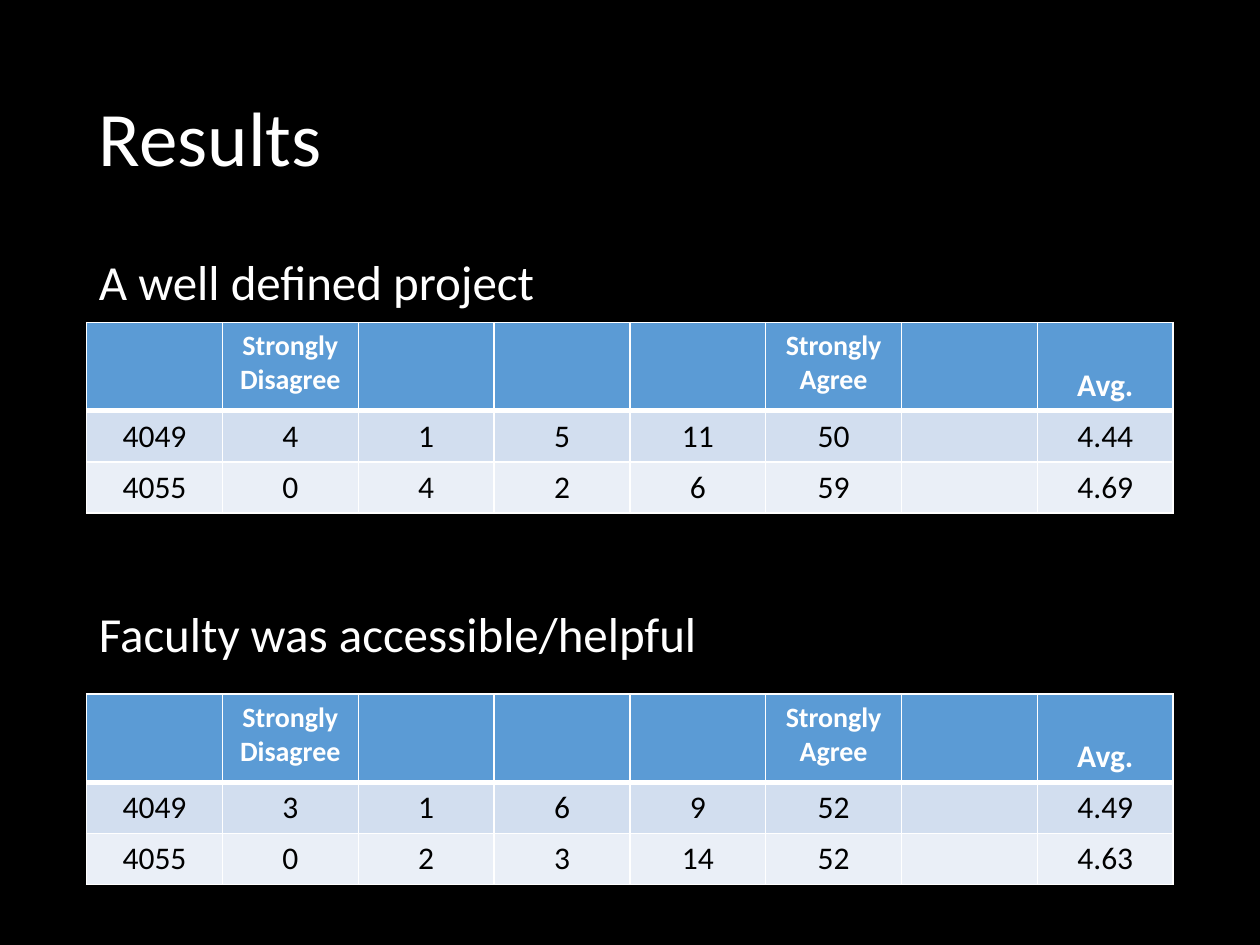
from dataclasses import dataclass
from pptx import Presentation
from pptx.dml.color import RGBColor as Color
from pptx.enum.text import MSO_ANCHOR as Anchor, PP_ALIGN as Align
from pptx.oxml import parse_xml
from pptx.oxml.ns import nsdecls
from pptx.util import Pt


@dataclass(frozen=True)
class Theme:
    font: str = "Calibri"
    black: str = "000000"
    white: str = "FFFFFF"
    row_fills: tuple = ("5B9BD5", "D2DEEF", "EAEFF7")
    title: int = 44
    body: int = 28
    cell: int = 18
    scale: int = 16


theme = Theme()


def write(para, text, size, color, bold=False):
    span = para.add_run()
    span.text = text
    formats = {"name": theme.font, "size": Pt(size), "bold": bold}
    for name, value in formats.items():
        setattr(span.font, name, value)
    span.font.color.rgb = Color.from_string(color)


def add_borders(cell, widths):
    properties = cell._tc.get_or_add_tcPr()
    for index, (side, width) in enumerate(widths.items()):
        properties.insert(index, parse_xml(
            f'<a:ln{side} {nsdecls("a")} w="{Pt(width)}"><a:solidFill>'
            f'<a:srgbClr val="{theme.white}"/></a:solidFill></a:ln{side}>'))


deck = Presentation()
deck.slide_width, deck.slide_height = Pt(720), Pt(540)
page = deck.slides.add_slide(deck.slide_layouts[6])
page.background.fill.solid()
page.background.fill.fore_color.rgb = Color.from_string(theme.black)

left, width = 49.5, 621
headings = [
    (28.8, 104.4, Anchor.MIDDLE, theme.title, [("Results", 0)]),
    (144, 342.7, Anchor.TOP, theme.body,
     [("A well defined project", 10), ("Faculty was accessible/helpful", 171)]),
]
for top, height, anchor, size, lines in headings:
    box = page.shapes.add_textbox(Pt(left), Pt(top), Pt(width), Pt(height))
    frame = box.text_frame
    frame.word_wrap = True
    frame.vertical_anchor = anchor
    for index, (text, space) in enumerate(lines):
        para = frame.add_paragraph() if index else frame.paragraphs[0]
        para.line_spacing = 0.9
        para.space_before = Pt(space)
        write(para, text, size, theme.white)

header = ["", "Strongly Disagree", "", "", "", "Strongly Agree", "", "Avg."]
row_heights = [50.4, 29.2, 29.2]
surveys = [
    (184.3, [["4049", "4", "1", "5", "11", "50", "", "4.44"],
             ["4055", "0", "4", "2", "6", "59", "", "4.69"]]),
    (396.7, [["4049", "3", "1", "6", "9", "52", "", "4.49"],
             ["4055", "0", "2", "3", "14", "52", "", "4.63"]]),
]
for top, answers in surveys:
    rows = [header] + answers
    table = page.shapes.add_table(
        len(rows), len(header), Pt(left), Pt(top), Pt(width), Pt(sum(row_heights))).table
    for column in table.columns:
        column.width = Pt(width / len(header))
    for row_index, values in enumerate(rows):
        is_header = row_index == 0
        table.rows[row_index].height = Pt(row_heights[row_index])
        for column_index, text in enumerate(values):
            cell = table.cell(row_index, column_index)
            cell.fill.solid()
            cell.fill.fore_color.rgb = Color.from_string(theme.row_fills[row_index])
            add_borders(cell, {"L": 1, "R": 1, "T": 3 if row_index == 1 else 1,
                               "B": 3 if is_header else 1})
            para = cell.text_frame.paragraphs[0]
            para.alignment = Align.CENTER
            if text == "Avg.":
                cell.vertical_anchor = Anchor.BOTTOM
            if text:
                size = theme.scale if text.startswith("Strongly") else theme.cell
                write(para, text, size, theme.white if is_header else theme.black, is_header)

deck.save("out.pptx")
